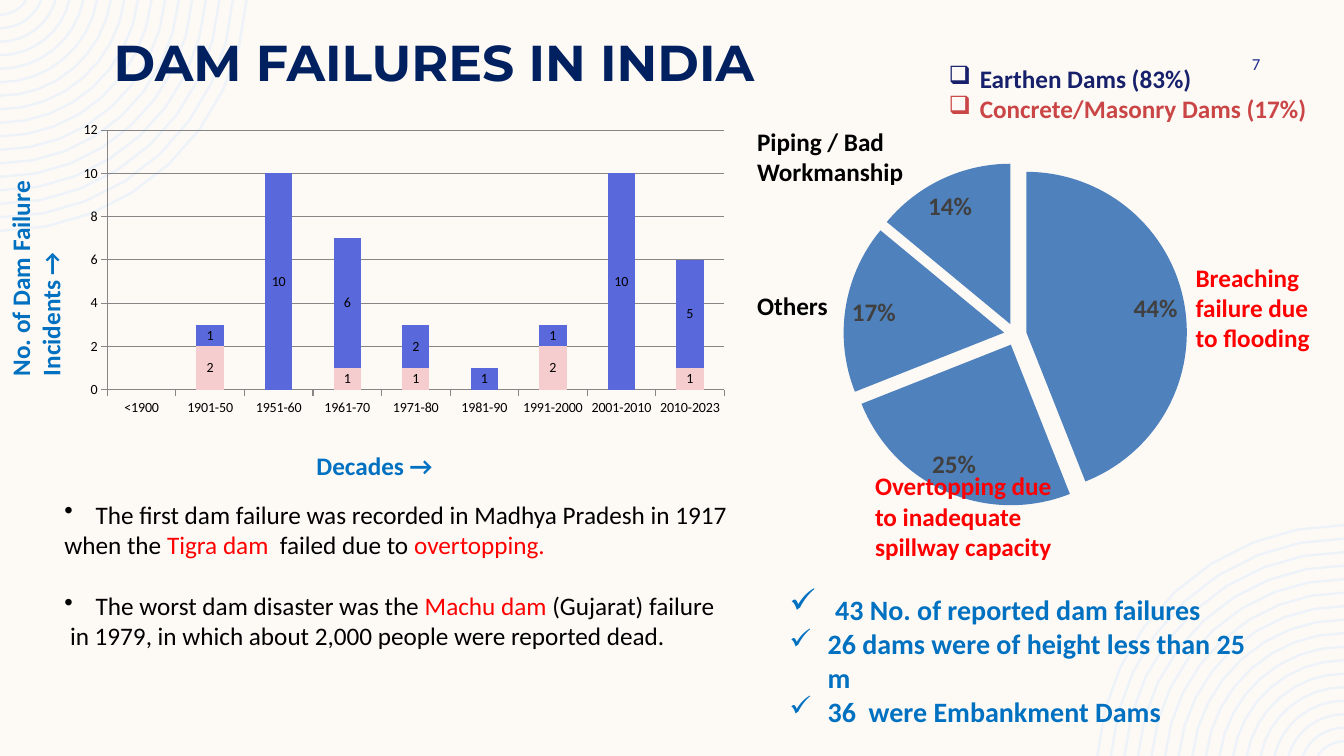
"""Build the slide on dam failures in India."""
import math
from dataclasses import dataclass
from typing import Optional

import pptx
import pptx.chart.data
import pptx.dml.color
import pptx.enum.chart
import pptx.enum.text
import pptx.oxml.ns
import pptx.util
from lxml import etree

Inches = pptx.util.Inches
Pt = pptx.util.Pt
qn = pptx.oxml.ns.qn


@dataclass(frozen=True)
class Theme:
    font: str = "Calibri"
    title_font: str = "Montserrat"
    paper: str = "FDFAF6"
    rings: str = "EEF3FA"
    title: str = "002060"
    number: str = "1F2C8F"
    earthen: str = "17216B"
    concrete: str = "CA4646"
    accent: str = "0070C0"
    alert: str = "FF0000"
    ink: str = "000000"
    label: str = "404040"
    axis: str = "868686"
    pink: str = "F5CDCE"
    blue: str = "5968DB"
    green: str = "D2D592"
    title_size: int = 36
    tick_size: int = 24
    fact_size: int = 20
    body_size: int = 18
    number_size: int = 12
    chart_size: int = 10


T = Theme()


@dataclass(frozen=True)
class Run:
    text: str
    color: str = T.ink
    size: int = T.body_size
    bold: bool = False
    font: str = T.font


@dataclass(frozen=True)
class Para:
    runs: tuple[Run, ...]
    bullet: str = ""
    indent: float = 0.31
    before: int = 0
    line: Optional[float] = None
    right: bool = False


@dataclass(frozen=True)
class Box:
    at: tuple[float, float, float, float]
    paras: tuple[Para, ...]
    wrap: bool = True
    middle: bool = False
    vertical: bool = False
    right_inset: float = 0.1


def bold(text: str, color: str, size: int = T.body_size) -> Run:
    """Return a bold run."""
    return Run(text, color, size, True)


def caption(at: tuple[float, float, float, float], text: str, color: str,
            wrap: bool = True, vertical: bool = False) -> Box:
    """Return a box holding one bold line of text."""
    return Box(at, (Para((bold(text, color),)),), wrap, vertical=vertical)


BOXES = (
    Box((1.03, 0.06, 11.67, 1.02),
        (Para((Run("DAM FAILURES IN INDIA", T.title, T.title_size, True, T.title_font),), line=48.8),),
        middle=True),
    Box((11.42, 0.5, 1.08, 0.27), (Para((Run("7", T.number, T.number_size),), right=True),),
        middle=True, right_inset=0),
    caption((3.04, 4.42, 1.37, 0.4), "Decades →", T.accent, wrap=False),
    caption((0, 1.65, 0.8, 2.18), "No. of Dam Failure Incidents →", T.accent, vertical=True),
    Box((9.31, 0.58, 3.77, 0.71),
        (Para((bold("Earthen Dams (83%)", T.earthen),), "❑"),
         Para((bold("Concrete/Masonry Dams (17%)", T.concrete),), "❑")), wrap=False),
    caption((11.76, 2.55, 1.4, 1.01), "Breaching failure due to flooding", T.alert),
    caption((8.58, 4.62, 2.21, 1.01), "Overtopping due to inadequate spillway capacity", T.alert),
    caption((7.41, 1.2, 2.05, 0.78), "Piping / Bad Workmanship", T.ink),
    caption((7.41, 2.83, 2.05, 0.45), "Others", T.ink),
    Box((7.73, 5.77, 4.99, 1.18),
        (Para((bold(" ", T.accent, T.tick_size),
               bold("43 No. of reported dam failures", T.accent, T.fact_size)), "✓", 0.38),
         Para((bold("26 dams were of height less than 25 m", T.accent, T.fact_size),), "✓", 0.38),
         Para((bold("36  were Embankment Dams", T.accent, T.fact_size),), "✓", 0.38))),
    Box((0.54, 4.9, 6.88, 2.52),
        (Para((Run("The first dam failure was recorded in Madhya Pradesh in 1917"),), "•"),
         Para((Run("when the "), Run("Tigra dam  ", T.alert), Run("failed due to "),
               Run("overtopping.", T.alert))),
         Para((Run("The worst dam disaster was the "), Run("Machu dam", T.alert),
               Run(" (Gujarat) failure")), "•", before=22),
         Para((Run(" in 1979, in which about 2,000 people were reported dead."),))), wrap=False),
)


def rgb(color: str) -> pptx.dml.color.RGBColor:
    """Return a colour object for a hex string."""
    return pptx.dml.color.RGBColor.from_string(color)


def add_box(s: pptx.slide.Slide, box: Box) -> None:
    """Add a text box with its paragraphs."""
    tf = s.shapes.add_textbox(*map(Inches, box.at)).text_frame
    tf.word_wrap = box.wrap
    tf.margin_right = Inches(box.right_inset)
    if box.middle:
        tf.vertical_anchor = pptx.enum.text.MSO_ANCHOR.MIDDLE
    if box.vertical:
        tf._txBody.bodyPr.set("vert", "vert270")
    for i, para in enumerate(box.paras):
        p = tf.add_paragraph() if i else tf.paragraphs[0]
        p.alignment = pptx.enum.text.PP_ALIGN.RIGHT if para.right else pptx.enum.text.PP_ALIGN.LEFT
        p.space_before = Pt(para.before)
        if para.line:
            p.line_spacing = Pt(para.line)
        if para.bullet:
            pPr = p._p.get_or_add_pPr()
            pPr.set("marL", str(Inches(para.indent)))
            pPr.set("indent", str(-Inches(para.indent)))
            etree.SubElement(pPr, qn("a:buChar")).set("char", para.bullet)
        for run in para.runs:
            r = p.add_run()
            r.text = run.text
            r.font.name, r.font.size, r.font.bold = run.font, Pt(run.size), run.bold
            r.font.color.rgb = rgb(run.color)


def add_rings(s: pptx.slide.Slide, flipped: bool) -> None:
    """Add a corner of concentric arcs, turned half round when flipped."""
    drop, steps, fb = 0.16, 8, None
    for ring in range(17):
        radius = 2.45 - 0.134 * ring
        start = math.asin(drop / radius)
        points = []
        for i in range(steps + 1):
            angle = start + (math.pi / 2 - start) * i / steps
            x, y = radius * math.cos(angle), radius * math.sin(angle) - drop
            points.append((Inches(13.33 - x), Inches(7.5 - y)) if flipped else (Inches(x), Inches(y)))
        if fb is None:
            fb = s.shapes.build_freeform(*points[0])
        else:
            fb.move_to(*points[0])
        fb.add_line_segments(points[1:], close=False)
    sp = fb.convert_to_shape()
    sp.shadow.inherit = False
    sp.fill.background()
    sp.line.color.rgb, sp.line.width = rgb(T.rings), Pt(1.75)


def add_chart(s: pptx.slide.Slide, kind: pptx.enum.chart.XL_CHART_TYPE,
              at: tuple[float, float, float, float], cats: tuple[str, ...],
              rows: tuple[tuple[Optional[float], ...], ...],
              colors: tuple[str, ...]) -> pptx.chart.chart.Chart:
    """Add a chart with filled and labelled series."""
    data = pptx.chart.data.CategoryChartData()
    data.categories = cats
    for i, row in enumerate(rows, 1):
        data.add_series(f"Series {i}", row)
    chart = s.shapes.add_chart(kind, *map(Inches, at), data).chart
    chart.has_legend = chart.has_title = False
    chart.font.name, chart.font.size = T.font, Pt(T.chart_size)
    chart.font.color.rgb = rgb(T.ink)
    chart.plots[0].vary_by_categories = False
    for series, color in zip(chart.plots[0].series, colors):
        series.format.fill.solid()
        series.format.fill.fore_color.rgb = rgb(color)
        series.data_labels.show_value = True
    return chart


def add_decades(s: pptx.slide.Slide) -> None:
    """Add the stacked columns of failures by decade."""
    cats = ("<1900", "1901-50", "1951-60", "1961-70", "1971-80", "1981-90",
            "1991-2000", "2001-2010", "2010-2023")
    rows = ((None, 2, None, 1, 1, None, 2, None, 1), (None, 1, 10, 6, 2, 1, 1, 10, 5))
    chart = add_chart(s, pptx.enum.chart.XL_CHART_TYPE.COLUMN_STACKED, (0.66, 1.15, 6.65, 3.14),
                      cats, rows, (T.pink, T.blue))
    chart.plots[0].gap_width, chart.plots[0].overlap = 150, 100
    chart.value_axis.maximum_scale, chart.value_axis.major_unit = 12, 2
    for line in (chart.category_axis.format.line, chart.value_axis.format.line,
                 chart.value_axis.major_gridlines.format.line):
        line.color.rgb, line.width = rgb(T.axis), Pt(0.75)
    area = chart._chartSpace.chart.plotArea
    for old in area.findall(qn("c:layout")):
        area.remove(old)
    layout = etree.Element(qn("c:layout"))
    area.insert(0, layout)
    manual = etree.SubElement(layout, qn("c:manualLayout"))
    for tag, val in (("layoutTarget", "inner"), ("xMode", "edge"), ("yMode", "edge"),
                     ("x", "0.061"), ("y", "0.045"), ("w", "0.92"), ("h", "0.82")):
        etree.SubElement(manual, qn(f"c:{tag}")).set("val", val)


def add_causes(s: pptx.slide.Slide) -> None:
    """Add the exploded pie of failure causes."""
    chart = add_chart(s, pptx.enum.chart.XL_CHART_TYPE.PIE, (7.41, 1.2, 5.32, 3.96),
                      ("1", "2", "3", "4"), ((0.44, 0.25, 0.17, 0.14),), (T.green,))
    series = chart.plots[0].series[0]
    explosion = etree.Element(qn("c:explosion"))
    explosion.set("val", "7")
    series._element.find(qn("c:spPr")).addnext(explosion)
    labels = series.data_labels
    labels.number_format, labels.number_format_is_linked = "0%", False
    labels.position = pptx.enum.chart.XL_LABEL_POSITION.BEST_FIT
    labels.font.name, labels.font.size, labels.font.bold = T.font, Pt(T.body_size), True
    labels.font.color.rgb = rgb(T.label)


def main() -> None:
    """Build and save the slide."""
    prs = pptx.Presentation()
    prs.slide_width, prs.slide_height = Inches(13.33), Inches(7.5)
    s = prs.slides.add_slide(prs.slide_layouts[6])
    s.background.fill.solid()
    s.background.fill.fore_color.rgb = rgb(T.paper)
    for flipped in (False, True):
        add_rings(s, flipped)
    add_decades(s)
    add_causes(s)
    for box in BOXES:
        add_box(s, box)
    prs.save("out.pptx")


if __name__ == "__main__":
    main()
